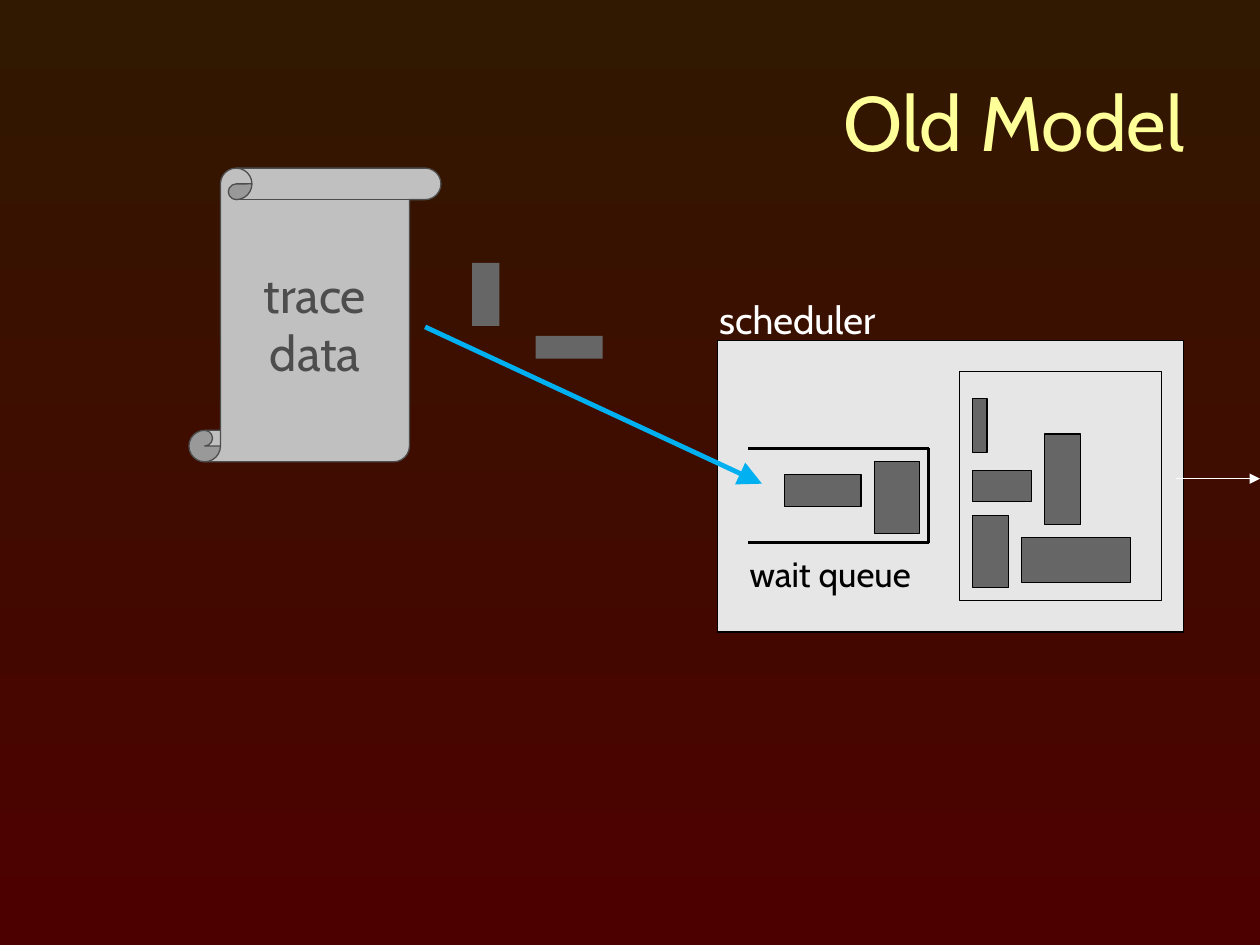
"""Build the "Old Model" slide: trace data feeding a scheduler with a wait queue."""
import pptx
import pptx.dml.color
import pptx.enum.shapes
import pptx.enum.text
import pptx.oxml
import pptx.oxml.ns
import pptx.util

Cm = pptx.util.Cm
Pt = pptx.util.Pt
SHAPE = pptx.enum.shapes.MSO_SHAPE
ALIGN = pptx.enum.text.PP_ALIGN
ANCHOR = pptx.enum.text.MSO_ANCHOR

FONT = "Cabin"
COLORS = {
    "top": "311800", "bottom": "4D0000", "title": "FFFF99",
    "panel": "E6E6E6", "job": "666666", "outline": "000000",
    "label": "FFFFFF", "feed": "00B0F0",
    "scroll": "C0C0C0", "scroll_ink": "4D4D4D",
}
ARRIVING_JOBS = [(10.8, 6.77, 1.35, 0.46), (9.52, 5.3, 0.55, 1.27)]
WAITING_JOBS = [(17.63, 9.3, 0.91, 1.45), (15.81, 9.56, 1.55, 0.65)]
RUNNING_JOBS = [
    (19.6, 10.39, 0.73, 1.45), (20.6, 10.83, 2.19, 0.91),
    (21.06, 8.75, 0.73, 1.82), (19.6, 8.03, 0.3, 1.09),
    (19.6, 9.48, 1.19, 0.63),
]


def rgb(name):
    return pptx.dml.color.RGBColor.from_string(COLORS[name])


def paint_background(slide):
    fill = slide.background.fill
    fill.gradient()
    fill.gradient_angle = 270
    for stop, name, position in zip(fill.gradient_stops, ("top", "bottom"), (0, 1)):
        stop.color.rgb = rgb(name)
        stop.position = position


def write(frame, text, size, color, align=ALIGN.LEFT):
    frame.text = text
    for paragraph in frame.paragraphs:
        paragraph.alignment = align
        for run in paragraph.runs:
            run.font.name = FONT
            run.font.size = Pt(size)
            run.font.color.rgb = rgb(color)


def add_title(slide, box, text):
    frame = slide.shapes.add_textbox(*map(Cm, box)).text_frame
    frame.word_wrap = True
    frame.vertical_anchor = ANCHOR.MIDDLE
    write(frame, text, 44, "title", ALIGN.RIGHT)


def add_label(slide, box, text, size, color):
    frame = slide.shapes.add_textbox(*map(Cm, box)).text_frame
    frame.margin_left = frame.margin_right = 0
    frame.margin_top = frame.margin_bottom = 0
    frame.word_wrap = False
    write(frame, text, size, color)


def add_block(slide, box, fill=None, line=None, width=0, kind=SHAPE.RECTANGLE):
    block = slide.shapes.add_shape(kind, *map(Cm, box))
    block.shadow.inherit = False
    if fill:
        block.fill.solid()
        block.fill.fore_color.rgb = rgb(fill)
    else:
        block.fill.background()
    if line:
        block.line.color.rgb = rgb(line)
        block.line.width = Pt(width)
    else:
        block.line.fill.background()
    return block


def add_line(slide, start, end, color, width=0, head=None):
    line = slide.shapes.add_connector(
        pptx.enum.shapes.MSO_CONNECTOR.STRAIGHT, *map(Cm, start + end))
    line.line.color.rgb = rgb(color)
    line.line.width = Pt(width)
    if head:
        tail = pptx.oxml.parse_xml(
            f'<a:tailEnd {pptx.oxml.ns.nsdecls("a")} type="triangle" w="{head}" len="{head}"/>')
        line.line._get_or_add_ln().append(tail)
    line._element.spPr.append(
        pptx.oxml.parse_xml(f'<a:effectLst {pptx.oxml.ns.nsdecls("a")}/>'))


def add_scheduler(slide):
    add_block(slide, (14.46, 6.87, 9.4, 5.87), "panel", "outline")
    add_label(slide, (14.5, 5.97, 3.38, 0.94), "scheduler", 22, "label")
    add_block(slide, (19.34, 7.49, 4.07, 4.62), line="outline")


def add_wait_queue(slide):
    left, right, top, bottom = 15.08, 18.72, 9.04, 10.94
    add_line(slide, (left, top), (right, top), "outline")
    add_line(slide, (left, bottom), (right, bottom), "outline")
    add_line(slide, (right, top), (right, bottom), "outline")
    add_label(slide, (15.11, 11.13, 3.4, 0.84), "wait queue", 20, "outline")


def add_trace_data(slide):
    scroll = add_block(slide, (3.81, 3.39, 5.08, 5.92), "scroll", "scroll_ink",
                       0.75, SHAPE.VERTICAL_SCROLL)
    scroll.adjustments[0] = 0.125
    frame = scroll.text_frame
    frame.word_wrap = False
    frame.vertical_anchor = ANCHOR.MIDDLE
    write(frame, "trace\ndata", 28, "scroll_ink", ALIGN.CENTER)


def main():
    deck = pptx.Presentation()
    deck.slide_width, deck.slide_height = Cm(25.4), Cm(19.05)
    slide = deck.slides.add_slide(deck.slide_layouts[6])
    paint_background(slide)
    add_title(slide, (1.27, 1.06, 22.86, 2.75), "Old Model")
    add_scheduler(slide)
    add_wait_queue(slide)
    add_line(slide, (8.57, 6.59), (15.36, 9.75), "feed", 2.75, "lg")
    for job in ARRIVING_JOBS:
        add_block(slide, job, "job")
    for job in WAITING_JOBS + RUNNING_JOBS:
        add_block(slide, job, "job", "outline")
    add_line(slide, (23.7, 9.65), (25.4, 9.65), "label", 0.75, "med")
    add_trace_data(slide)
    deck.save("out.pptx")


if __name__ == "__main__":
    main()
